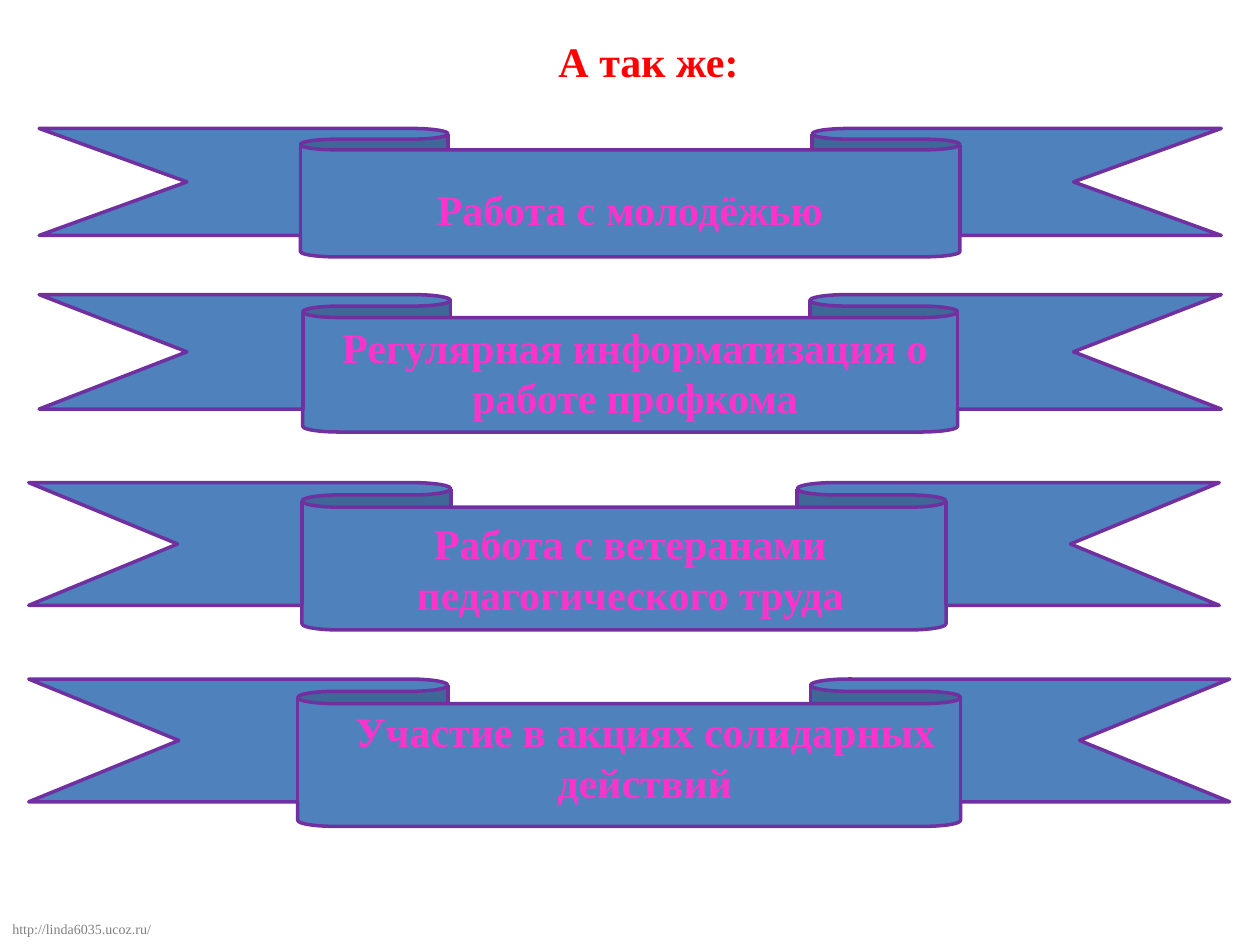
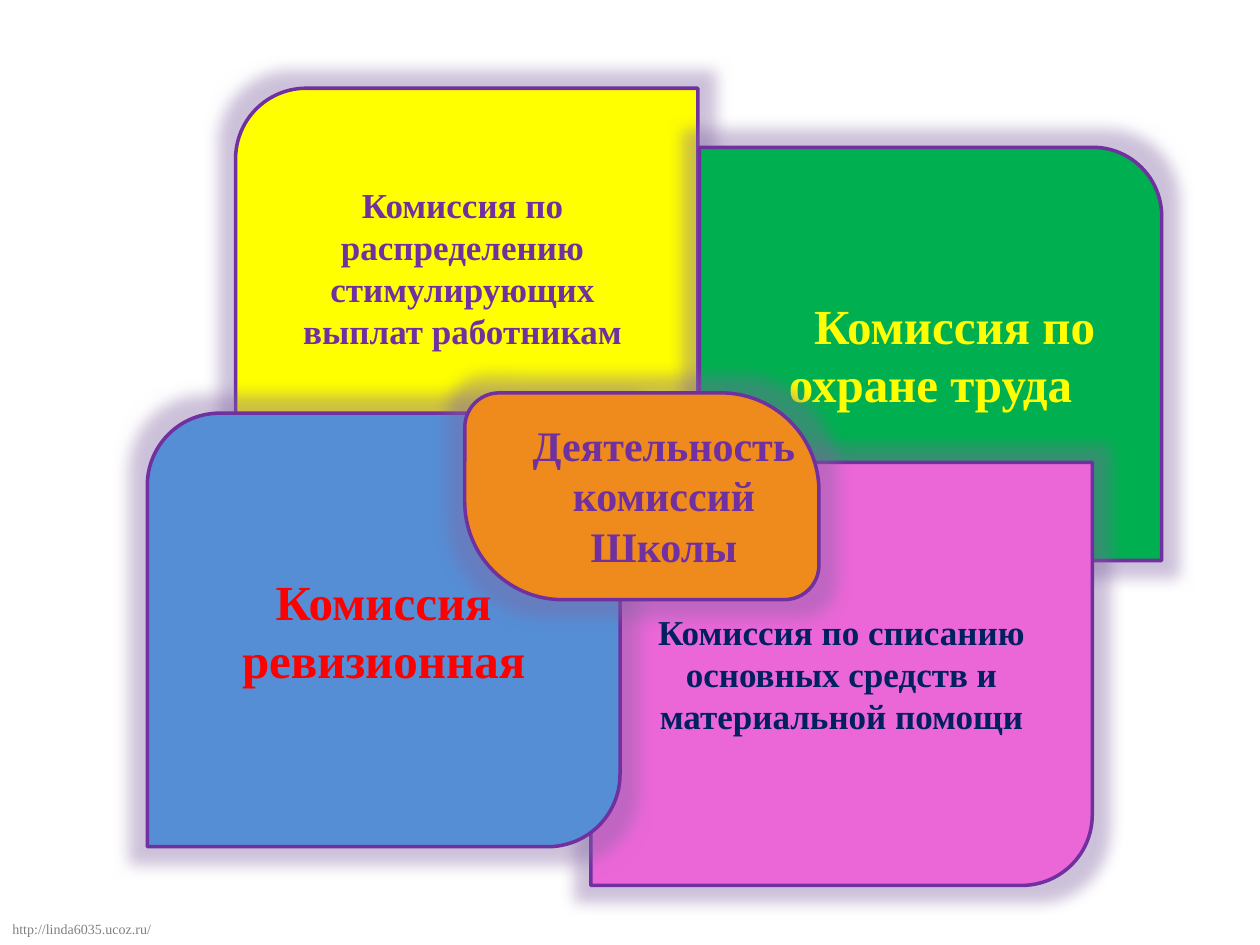
"""Two slides on the work of a school trade union committee."""
from lxml import etree
from pptx import Presentation
from pptx import util as u
from pptx.dml.color import RGBColor
from pptx.enum import shapes, text
from pptx.oxml.ns import qn

FONT = "Times New Roman"
PURPLE, RED, YELLOW, PINK = "7030A0", "FF0000", "FFFF00", "FF33CC"
RIBBON_BLUE, GREY, GLOW = "4F81BD", "808080", "8064A2"
TITLE_ONLY = 5


def color(value):
    return RGBColor.from_string(value)


def place(*lengths):
    return [u.Cm(length) for length in lengths]


class Designer:
    def __init__(self):
        self.deck = Presentation()
        self.deck.slide_width, self.deck.slide_height = place(25.4, 19.05)
        self.page = None

    def new_page(self):
        self.page = self.deck.slides.add_slide(self.deck.slide_layouts[TITLE_ONLY])
        footer = self.label((0, 18.44, 3.33, 0.61), "http://linda6035.ucoz.ru/", 8, GREY,
                            bold=False, align=text.PP_ALIGN.LEFT)
        footer.text_frame.word_wrap = False

    def set_words(self, box, words, size, ink, bold=True, align=text.PP_ALIGN.CENTER,
                  anchor=text.MSO_ANCHOR.TOP):
        frame = box.text_frame
        frame.text = words
        frame.word_wrap = True
        frame.auto_size = text.MSO_AUTO_SIZE.NONE
        frame.vertical_anchor = anchor
        para = frame.paragraphs[0]
        para.alignment = align
        for span in para.runs:
            span.font.name, span.font.size, span.font.bold = FONT, u.Pt(size), bold
            span.font.color.rgb = color(ink)
        return para

    def title(self, area, words, ink):
        box = self.page.shapes.title
        box.left, box.top, box.width, box.height = place(*area)
        self.set_words(box, words, 24, ink)
        self.page.shapes.element.append(box.element)

    def label(self, area, words, size, ink, **style):
        box = self.page.shapes.add_textbox(*place(*area))
        self.set_words(box, words, size, ink, **style)
        return box

    def figure(self, kind, area, fill, adjustments=()):
        shape = self.page.shapes.add_shape(kind, *place(*area))
        shape.shadow.inherit = False
        shape.fill.solid()
        shape.fill.fore_color.rgb = color(fill)
        shape.line.color.rgb = color(PURPLE)
        shape.line.width = u.Pt(2)
        for index, value in enumerate(adjustments):
            shape.adjustments[index] = value
        return shape

    def ribbon(self, area, fold, label_area, words):
        self.figure(shapes.MSO_SHAPE.DOWN_RIBBON, area, RIBBON_BLUE, (0.167, fold))
        self.label(label_area, words, 24, PINK)

    def leaf(self, area, fill, words="", size=20, ink=PURPLE, adjustments=(),
             flipped=False, indent=0):
        shape = self.figure(shapes.MSO_SHAPE.ROUND_2_DIAG_RECTANGLE, area, fill, adjustments)
        properties = shape.element.spPr
        glow = etree.SubElement(properties.find(qn("a:effectLst")), qn("a:glow"), rad="228600")
        tint = etree.SubElement(glow, qn("a:srgbClr"), val=GLOW)
        etree.SubElement(tint, qn("a:alpha"), val="40000")
        if flipped:
            properties.find(qn("a:xfrm")).set("flipH", "1")
        if words:
            para = self.set_words(shape, words, size, ink, anchor=text.MSO_ANCHOR.MIDDLE)
            if indent:
                para._p.get_or_add_pPr().set("indent", str(u.Cm(indent)))


def build_directions(designer):
    designer.new_page()
    designer.title((1.57, 0.58, 23.01, 1.27), "А так же:", RED)
    directions = [
        ((0.79, 2.59, 23.83, 2.59), 0.558, (7.54, 3.58, 10.31, 2.13), "Работа с молодёжью"),
        ((0.79, 5.94, 23.83, 2.77), 0.554, (6.55, 6.35, 12.5, 2.31),
         "Регулярная информатизация о работе профкома"),
        ((0.58, 9.73, 24, 2.97), 0.541, (6.15, 10.31, 13.11, 2.31),
         "Работа с ветеранами педагогического труда"),
        ((0.58, 13.69, 24.21, 2.97), 0.552, (6.55, 14.1, 12.9, 3.33),
         "Участие в акциях солидарных действий"),
    ]
    for direction in directions:
        designer.ribbon(*direction)


def build_commissions(designer):
    designer.new_page()
    designer.leaf((4.75, 1.78, 9.32, 8.53), YELLOW)
    designer.leaf((14.1, 2.97, 9.32, 8.33), "00B050", "Комиссия по охране труда", 28, YELLOW,
                  flipped=True, indent=0.97)
    designer.leaf((11.91, 9.32, 10.11, 8.53), "EB67D8",
                  "Комиссия по списанию основных средств и материальной помощи", 20, "002060")
    designer.leaf((2.97, 8.33, 9.53, 8.74), "558ED5", "Комиссия ревизионная", 28, RED)
    designer.label((5.16, 3.58, 8.33, 3.68),
                   "Комиссия по распределению стимулирующих выплат работникам", 20, PURPLE)
    designer.leaf((9.37, 7.92, 7.14, 4.17), "EF8B1D", adjustments=(0.167, 0.474))
    designer.title((10.11, 8.33, 6.55, 3.33), "Деятельность комиссий Школы", PURPLE)


def main():
    designer = Designer()
    build_directions(designer)
    build_commissions(designer)
    designer.deck.save("out.pptx")


if __name__ == "__main__":
    main()
